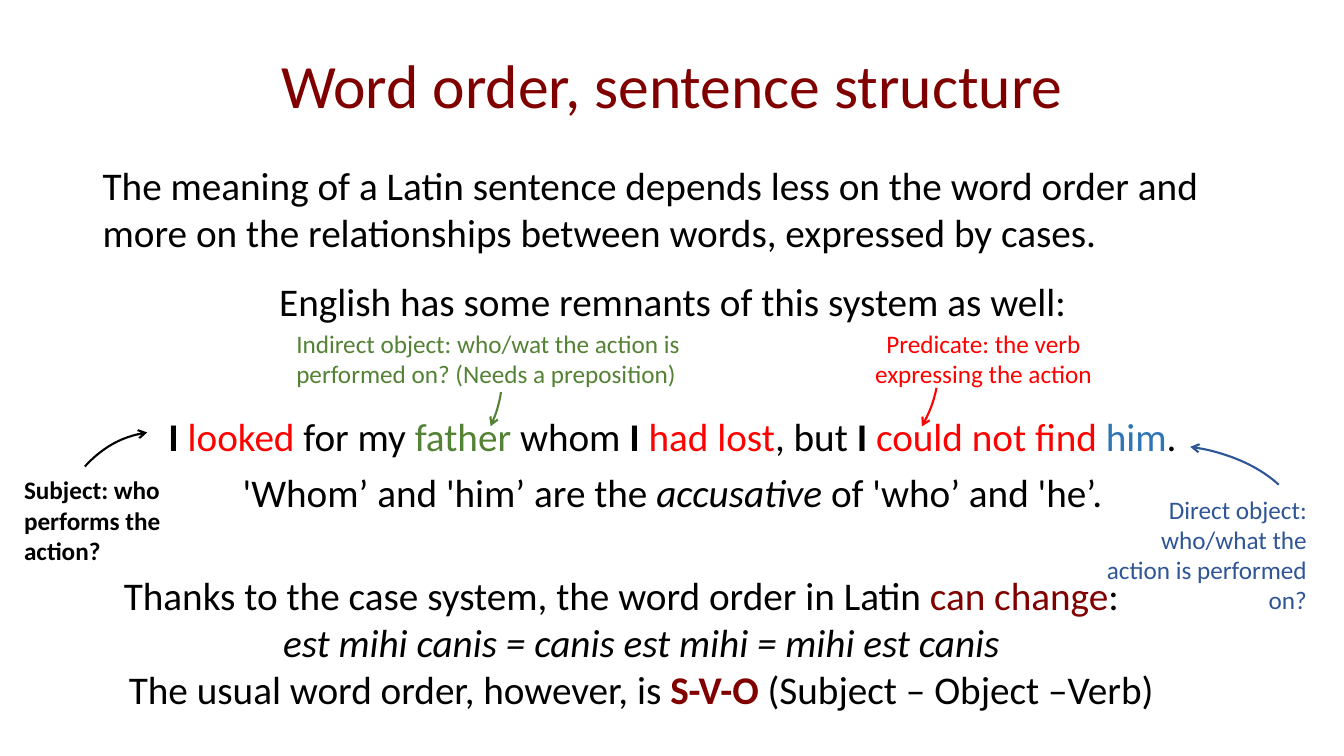
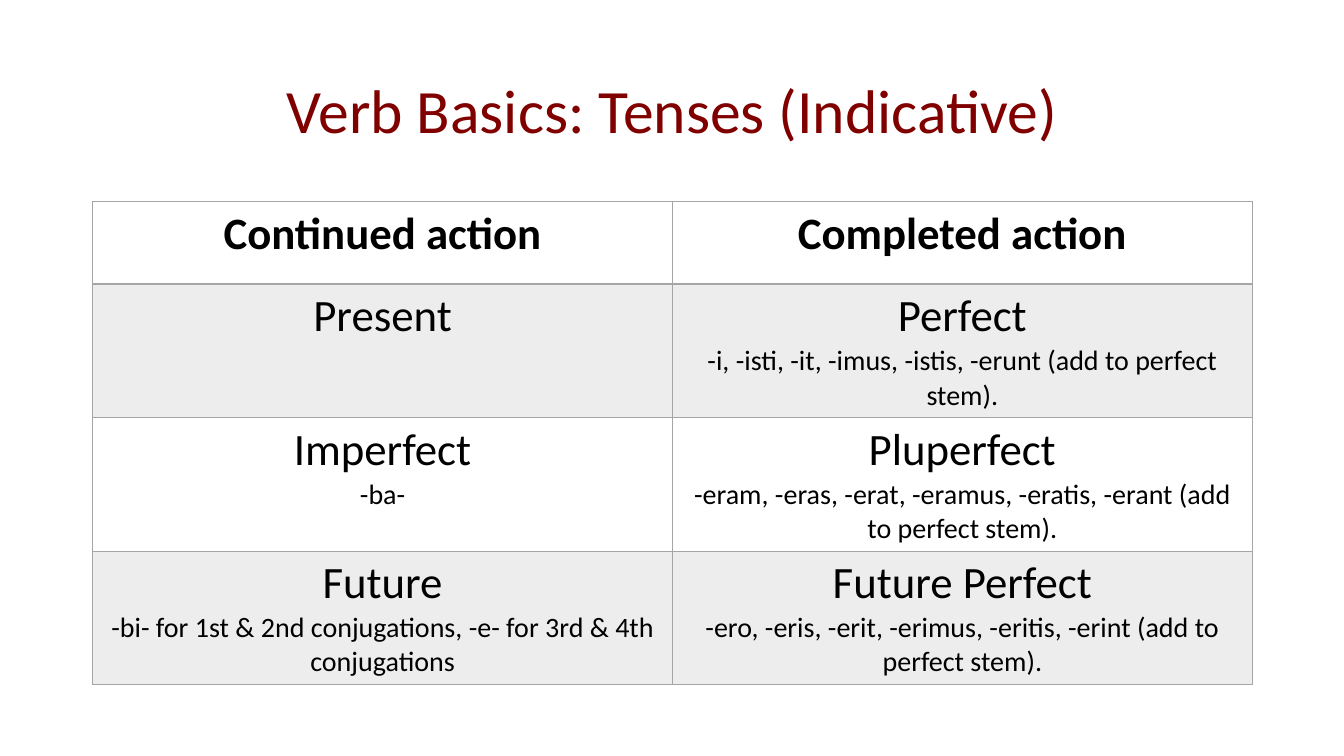
from lxml import etree
from pptx import Presentation
from pptx.dml.color import RGBColor
from pptx.enum import shapes, text
from pptx.oxml import ns
from pptx.util import Inches, Pt

BLACK, MAROON, RED = "000000", "800000", "FF0000"
GREEN, BLUE, NAVY = "548235", "2E75B6", "2F5597"
GRID, BAND = "A5A5A5", "EDEDED"
LEFT, CENTER, RIGHT = text.PP_ALIGN.LEFT, text.PP_ALIGN.CENTER, text.PP_ALIGN.RIGHT
BOLD, ITALIC = {"bold": True}, {"italic": True}


def rgb(value):
    return RGBColor.from_string(value)


def inches(box):
    return [Inches(n) for n in box]


def set_attrs(target, values):
    for name, value in values.items():
        setattr(target, name, value)


class Deck:
    font = "Calibri"

    def __init__(self):
        self.prs = Presentation()
        self.prs.slide_width, self.prs.slide_height = inches((13.33, 7.5))
        self.s = None

    def add_slide(self, title, box):
        self.s = self.prs.slides.add_slide(self.prs.slide_layouts[5])
        sp = self.s.shapes.title
        set_attrs(sp, dict(zip(("left", "top", "width", "height"), inches(box))))
        tf = sp.text_frame
        set_attrs(tf, {"word_wrap": True, "auto_size": text.MSO_AUTO_SIZE.NONE,
                       "vertical_anchor": text.MSO_ANCHOR.MIDDLE})
        self.fill_text(tf, [([(title, {})], {"alignment": CENTER, "line_spacing": 0.9})],
                       44, MAROON)

    def fill_text(self, tf, paragraphs, size, color=BLACK):
        for i, (runs, layout) in enumerate(paragraphs):
            p = tf.paragraphs[0] if i == 0 else tf.add_paragraph()
            set_attrs(p, layout)
            for words, style in runs:
                r = p.add_run()
                r.text = words
                style = {"name": self.font, "size": Pt(size), "color": color, **style}
                r.font.color.rgb = rgb(style.pop("color"))
                set_attrs(r.font, style)

    def text_box(self, box, paragraphs, size=28, color=BLACK):
        tf = self.s.shapes.add_textbox(*inches(box)).text_frame
        tf.word_wrap = True
        self.fill_text(tf, paragraphs, size, color)

    def label(self, words, box, color, align=LEFT, style=None):
        self.text_box(box, [([(words, style or {})], {"alignment": align})], 18, color)

    def arc_arrow(self, box, rotation, angles, color, flip=False):
        sp = self.s.shapes.add_shape(shapes.MSO_SHAPE.ARC, *inches(box))
        sp.shadow.inherit = False
        sp.fill.background()
        sp.rotation = rotation
        for i, angle in enumerate(angles):
            sp.adjustments[i] = angle
        sp.line.color.rgb = rgb(color)
        sp.line.width = Pt(1.5)
        ln = sp._element.spPr.find(ns.qn("a:ln"))
        etree.SubElement(ln, ns.qn("a:tailEnd"), type="arrow")
        if flip:
            sp._element.spPr.find(ns.qn("a:xfrm")).set("flipV", "1")

    def borders(self, cell, widths):
        tc_pr = cell._tc.get_or_add_tcPr()
        for side, width in widths.items():
            ln = etree.SubElement(tc_pr, ns.qn("a:ln" + side), w=str(Pt(width)))
            fill = etree.SubElement(ln, ns.qn("a:solidFill"))
            etree.SubElement(fill, ns.qn("a:srgbClr"), val=GRID)

    def table(self, box, rows, heights):
        table = self.s.shapes.add_table(len(rows), len(rows[0]), *inches(box)).table
        set_attrs(table, {"first_row": False, "horz_banding": False})
        for i, row in enumerate(rows):
            table.rows[i].height = Inches(heights[i])
            for j, (heading, endings) in enumerate(row):
                cell = table.cell(i, j)
                self.borders(cell, {"L": 1, "R": 1, "T": 2 if i == 1 else 1,
                                    "B": 2 if i == 0 else 1})
                if i % 2:
                    cell.fill.solid()
                    cell.fill.fore_color.rgb = rgb(BAND)
                else:
                    cell.fill.background()
                lines = [([(heading, {"bold": i == 0})], {"alignment": CENTER})]
                if endings:
                    lines.append(([(endings, {"size": Pt(20)})], {"alignment": CENTER}))
                self.fill_text(cell.text_frame, lines, 32)


def word_order(deck):
    deck.add_slide("Word order, sentence structure", (0.76, 0.15, 11.82, 1.45))
    red, green, blue, maroon = ({"color": c} for c in (RED, GREEN, BLUE, MAROON))
    centered = {"alignment": CENTER}
    example = {**centered, "line_spacing": 0.9}
    deck.text_box((0.92, 1.55, 11.5, 3.77), [
        ([("The meaning of a Latin sentence depends less on the word order and more on "
           "the relationships between words, expressed by cases.", {})],
         {"space_after": Pt(6)}),
        ([("English has some remnants of this system as well:", {})],
         {**centered, "space_before": Pt(10), "space_after": Pt(6)}),
        ([("I ", BOLD), ("looked", red), (" for my ", {}), ("father", green),
          (" whom ", {}), ("I ", BOLD), ("had lost", red), (", but ", {}),
          ("I ", BOLD), ("could not find ", red), ("him", blue), (".", {})],
         {**example, "space_before": Pt(60)}),
        ([("'Whom’ and 'him’ are the ", {}), ("accusative ", ITALIC),
          ("of 'who’ and 'he’.", {})],
         {**example, "space_before": Pt(10)}),
    ])

    deck.label("Subject: who performs the action?", (0.14, 4.66, 1.81, 1.01), BLACK, style=BOLD)
    deck.label("Direct object: who/what the action is performed on?",
               (10.87, 4.85, 2.19, 1.31), NAVY, RIGHT)
    deck.label("Indirect object: who/wat the action is performed on? (Needs a preposition)",
               (2.84, 3.21, 4.81, 0.71), GREEN)
    deck.label("Predicate: the verb expressing the action", (8.17, 3.21, 3.17, 0.71), RED, CENTER)

    deck.arc_arrow((0.49, 4.35, 2.09, 1.93), 292.5, (175.34, 200.02), BLACK)
    deck.arc_arrow((10.34, 3.88, 2.09, 3.16), 265.6, (175.34, 200.02), NAVY, flip=True)
    deck.arc_arrow((3.46, 3.07, 1.38, 2.03), 38, (185.19, 200.02), GREEN)
    deck.arc_arrow((7.79, 2.97, 1.38, 2.03), 38, (187.46, 205.4), RED)

    deck.text_box((1.13, 5.62, 10.46, 1.51), [
        ([("Thanks to the case system, the word order in Latin ", {}),
          ("can change", maroon), (":", {})], {}),
        ([("est mihi canis = canis est mihi = mihi est canis", ITALIC)], centered),
        ([("The usual word order, however, is ", {}), ("S-V-O", {**maroon, **BOLD}),
          (" (Subject – Object –Verb)", {})], centered),
    ])


def tenses(deck):
    deck.add_slide("Verb Basics: Tenses (Indicative)", (0.92, 0.4, 11.5, 1.45))
    deck.table((0.92, 2, 11.5, 4.72), [
        [("Continued action", ""), ("Completed action", "")],
        [("Present", ""),
         ("Perfect", "-i, -isti, -it, -imus, -istis, -erunt (add to perfect stem).")],
        [("Imperfect", "-ba-"),
         ("Pluperfect", "-eram, -eras, -erat, -eramus, -eratis, -erant (add to perfect stem).")],
        [("Future", "-bi- for 1st & 2nd conjugations, -e- for 3rd & 4th conjugations"),
         ("Future Perfect", "-ero, -eris, -erit, -erimus, -eritis, -erint (add to perfect stem).")],
    ], [0.82, 1.3, 1.3, 1.3])


def main():
    deck = Deck()
    word_order(deck)
    tenses(deck)
    deck.prs.save("out.pptx")


if __name__ == "__main__":
    main()
